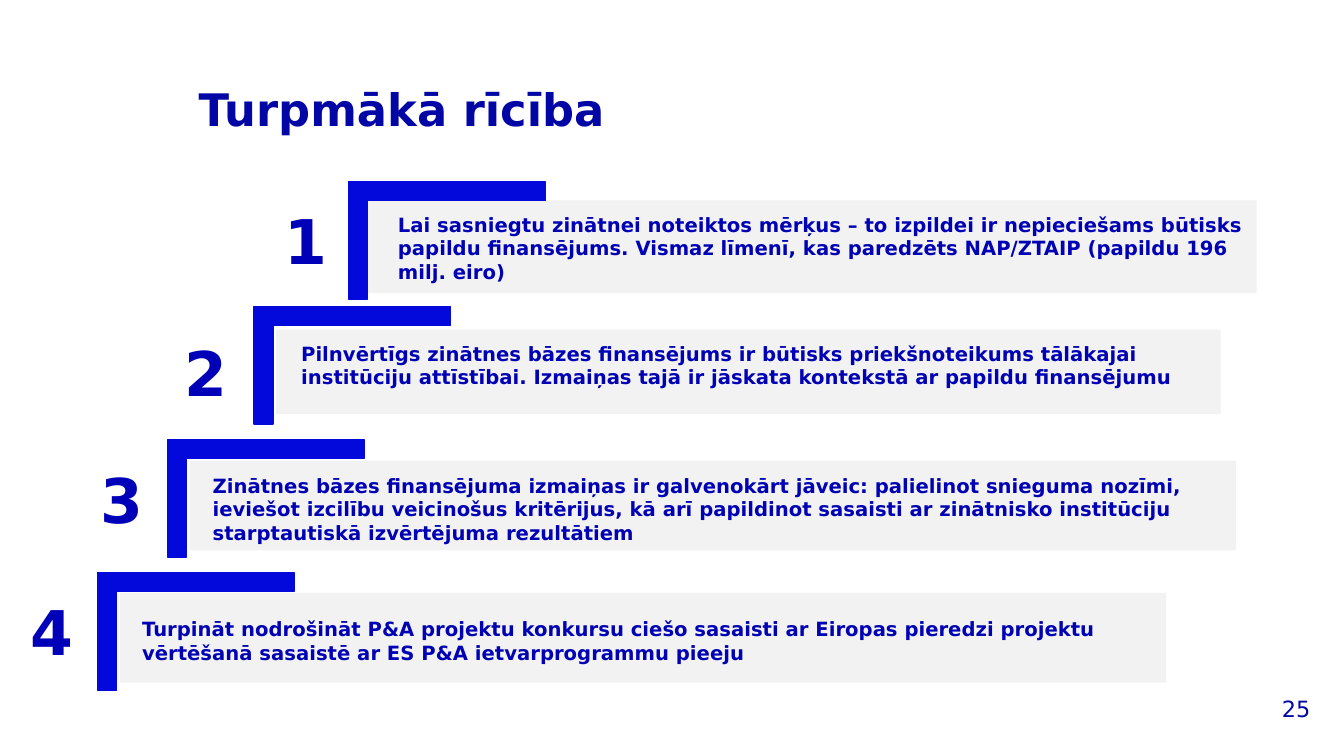
from lxml import etree
from pptx import Presentation
from pptx import util as u
from pptx.dml.color import RGBColor
from pptx.enum import shapes, text
from pptx.oxml import ns

BRACKET = RGBColor(0x03, 0x08, 0xDB)
PANEL = RGBColor(0xF2, 0xF2, 0xF2)
HEADING = RGBColor(0x02, 0x06, 0xA4)
BODY = RGBColor(0x00, 0x01, 0xB4)
NUMBER = RGBColor(0x00, 0x00, 0xB8)

BRACKET_W, BRACKET_H = 4.95, 2.97

# panel (left, top, width, height), text (left, top, width, height),
# bracket (left, top), number (left, top), all in cm
STEPS = [
    ((9.17, 5.05, 22.5, 2.34), (9.78, 5.23, 22.35, 2.06), (8.79, 4.57), (6.93, 4.98),
     "Lai sasniegtu zinātnei noteiktos mērķus – to izpildei ir nepieciešams būtisks "
     "papildu finansējums. Vismaz līmenī, kas paredzēts NAP/ZTAIP (papildu 196 milj. eiro)"),
    ((6.96, 8.31, 23.8, 2.13), (7.34, 8.48, 23.01, 2.39), (6.4, 7.72), (4.39, 8.31),
     "Pilnvērtīgs zinātnes bāzes finansējums ir būtisks priekšnoteikums tālākajai "
     "institūciju attīstībai. Izmaiņas tajā ir jāskata kontekstā ar papildu finansējumu"),
    ((4.78, 11.61, 26.37, 2.26), (5.11, 11.81, 25.4, 2.06), (4.22, 11.07), (2.29, 11.51),
     "Zinātnes bāzes finansējuma izmaiņas ir galvenokārt jāveic: palielinot snieguma nozīmi, "
     "ieviešot izcilību veicinošus kritērijus, kā arī papildinot sasaisti ar zinātnisko "
     "institūciju starptautiskā izvērtējuma rezultātiem"),
    ((3.02, 14.94, 26.37, 2.26), (3.33, 15.42, 25.4, 1.45), (2.46, 14.43), (0.53, 14.83),
     "Turpināt nodrošināt P&A projektu konkursu ciešo sasaisti ar Eiropas pieredzi projektu "
     "vērtēšanā sasaistē ar ES P&A ietvarprogrammu pieeju"),
]


def write(tf, words, size, color, bold=True, align=text.PP_ALIGN.LEFT,
          anchor=text.MSO_ANCHOR.TOP):
    """Fill a text frame with one formatted paragraph."""
    tf.word_wrap = True
    tf.auto_size = text.MSO_AUTO_SIZE.NONE
    tf.vertical_anchor = anchor
    p = tf.paragraphs[0]
    p.alignment = align
    r = p.add_run()
    r.text = words
    r.font.name = "DejaVu Sans"
    r.font.size = u.Pt(size)
    r.font.bold = bold
    r.font.color.rgb = color


class StepSlide:
    """Holds the slide and draws each kind of element on it."""

    def __init__(self, prs):
        self.s = prs.slides.add_slide(prs.slide_layouts[5])

    def title(self, box, words):
        sp = self.s.shapes.title
        sp.left, sp.top, sp.width, sp.height = map(u.Cm, box)
        write(sp.text_frame, words, 32, HEADING)

    def label(self, box, words, size, color, **fmt):
        sp = self.s.shapes.add_textbox(*map(u.Cm, box))
        write(sp.text_frame, words, size, color, **fmt)

    def rectangle(self, box, color):
        sp = self.s.shapes.add_shape(shapes.MSO_SHAPE.RECTANGLE, *map(u.Cm, box))
        sp.shadow.inherit = False
        sp.fill.solid()
        sp.fill.fore_color.rgb = color
        sp.line.fill.background()
        return sp

    def bracket(self, left, top):
        """Draw a corner turned a quarter, its visible top left at the given point."""
        shift = (BRACKET_W - BRACKET_H) / 2
        sp = self.rectangle((left + shift, top - shift, BRACKET_H, BRACKET_W), BRACKET)
        sp.rotation = 90
        sp.line.color.rgb = BRACKET
        sp.line.width = u.Pt(1)
        # python-pptx has no member for the "corner" preset
        geom = sp.element.spPr.find(ns.qn("a:prstGeom"))
        geom.set("prst", "corner")
        for name in ("adj1", "adj2"):
            etree.SubElement(geom.find(ns.qn("a:avLst")), ns.qn("a:gd"),
                             name=name, fmla="val 16100")

    def step(self, number, panel, body, bracket, number_at, words):
        self.rectangle(panel, PANEL)
        self.label(body, words, 14, BODY)
        self.bracket(*bracket)
        self.label((*number_at, 1.68, 2.13), str(number), 44, NUMBER)


def main():
    prs = Presentation()
    prs.slide_width, prs.slide_height = u.Cm(33.87), u.Cm(19.05)
    slide = StepSlide(prs)
    slide.title((4.75, 1.93, 27.99, 1.63), "Turpmākā rīcība")
    for number, step in enumerate(STEPS, 1):
        slide.step(number, *step)
    slide.label((25.65, 17.35, 7.62, 1.02), "25", 16, HEADING, bold=False,
                align=text.PP_ALIGN.RIGHT, anchor=text.MSO_ANCHOR.MIDDLE)
    prs.save("out.pptx")


if __name__ == "__main__":
    main()
